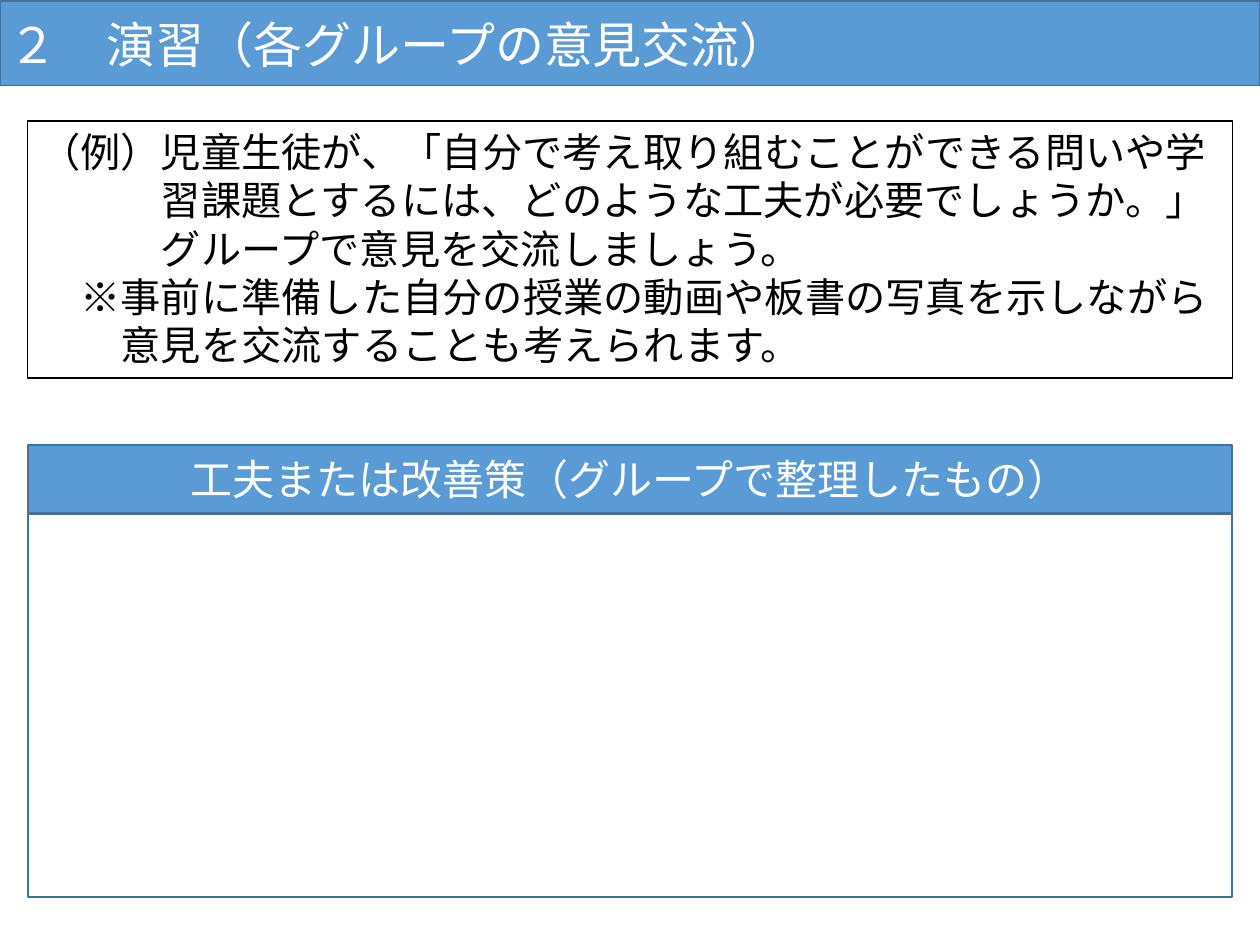
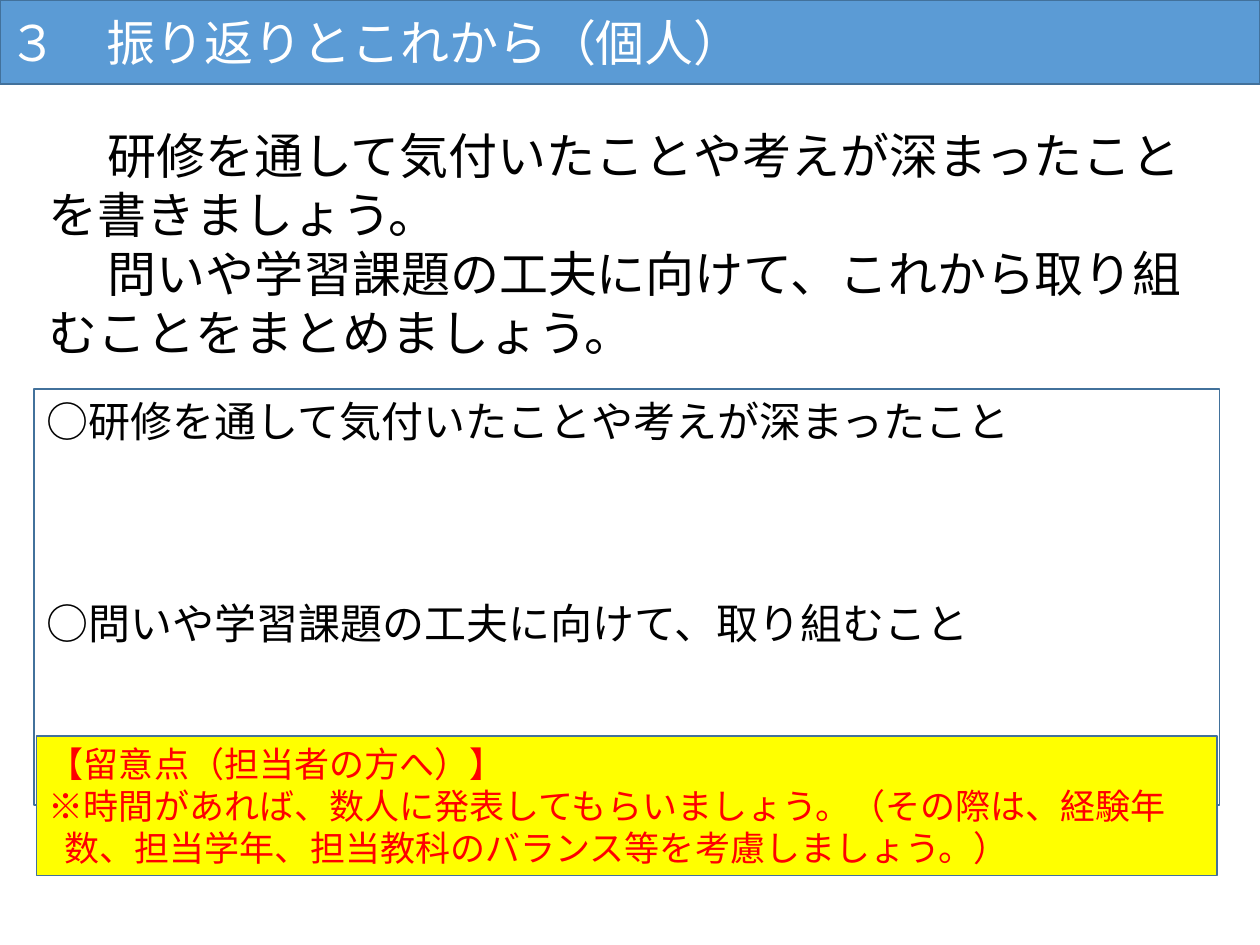
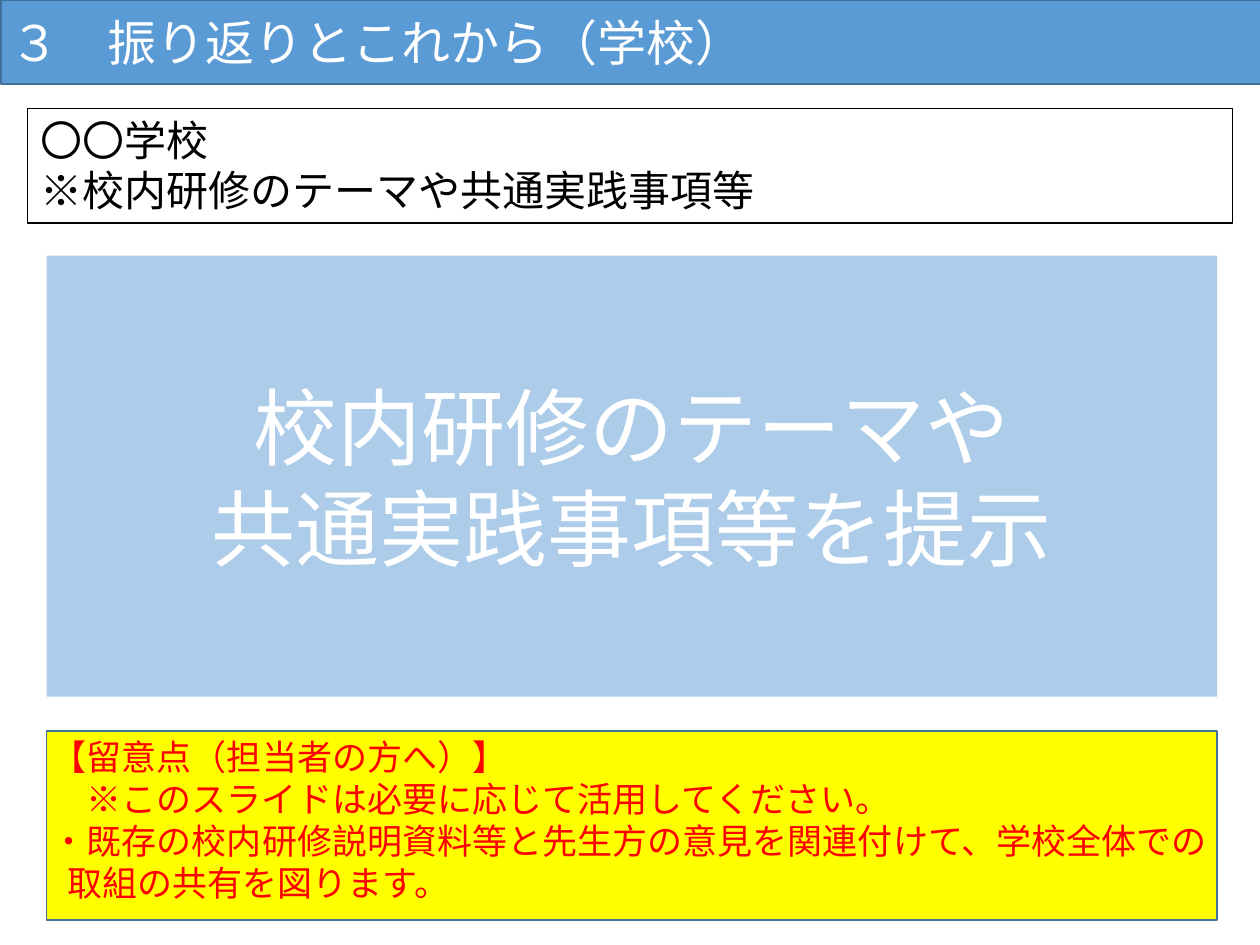
from lxml import etree
from pptx import Presentation
from pptx.dml.color import RGBColor
from pptx.enum.shapes import MSO_SHAPE
from pptx.enum.text import MSO_ANCHOR, PP_ALIGN
from pptx.oxml.ns import qn
from pptx.util import Inches, Pt

RECTANGLE = MSO_SHAPE.RECTANGLE
TOP, MIDDLE = MSO_ANCHOR.TOP, MSO_ANCHOR.MIDDLE
LEFT, CENTER = PP_ALIGN.LEFT, PP_ALIGN.CENTER

WIDTH, HEIGHT = Inches(10), Inches(7.5)
COLUMNS, ROWS = 100, 75
BLUE, BLUE_EDGE = "5B9BD5", "42719B"
YELLOW, RED, BLACK, WHITE = "FFFF00", "FF0000", "000000", "FFFFFF"
JAPANESE, ARIAL, CALIBRI = "Noto Sans CJK JP", "Arial", "Calibri"
LINE_HEIGHT = 1.2
HALF_STEP, LEAD_IN = 0.45, 1.2
NOTE_HEADING = "【留意点（担当者の方へ）】"


def color(value):
    """Turn a hex string into a colour."""
    return RGBColor.from_string(value)


def add_slide(presentation):
    """Add a blank slide."""
    return presentation.slides.add_slide(presentation.slide_layouts[6])


def add_box(slide, area, fill=None, edge=None, edge_width=1, opacity=100):
    """Add a rectangle placed by grid column, row, width and height."""
    column, row, across, down = area
    shape = slide.shapes.add_shape(
        RECTANGLE,
        round(WIDTH * column / COLUMNS),
        round(HEIGHT * row / ROWS),
        round(WIDTH * across / COLUMNS),
        round(HEIGHT * down / ROWS),
    )
    shape.shadow.inherit = False
    if fill:
        shape.fill.solid()
        shape.fill.fore_color.rgb = color(fill)
        if opacity < 100:
            tint = shape._element.spPr.find(qn("a:solidFill"))[0]
            etree.SubElement(tint, qn("a:alpha"), val=str(opacity * 1000))
    else:
        shape.fill.background()
    if edge:
        shape.line.color.rgb = color(edge)
        shape.line.width = Pt(edge_width)
    else:
        shape.line.fill.background()
    return shape


def prepare_frame(shape, anchor=TOP, insets=(0.1, 0.05)):
    """Set wrapping, anchor and insets, and return the text frame."""
    frame = shape.text_frame
    frame.word_wrap = True
    frame.vertical_anchor = anchor
    frame.margin_left = frame.margin_right = Inches(insets[0])
    frame.margin_top = frame.margin_bottom = Inches(insets[1])
    return frame


def write(frame, lines, size, ink=BLACK, font=JAPANESE, align=LEFT, gap=0):
    """Write (text, margin, first indent) lines, with indents in characters."""
    for index, (text, margin, indent) in enumerate(lines):
        paragraph = frame.add_paragraph() if index else frame.paragraphs[0]
        paragraph.text = text
        paragraph.alignment = align
        paragraph.line_spacing = Pt(LINE_HEIGHT * size)
        paragraph.space_before = Pt(gap * LINE_HEIGHT * size if index else 0)
        paragraph.font.size = Pt(size)
        paragraph.font.color.rgb = color(ink)
        paragraph.font.name = font
        properties = paragraph._p.get_or_add_pPr()
        properties.set("marL", str(round(Pt(size) * margin)))
        properties.set("indent", str(round(Pt(size) * indent)))
        defaults = properties.find(qn("a:defRPr"))
        etree.SubElement(defaults, qn("a:ea"), typeface=JAPANESE)


def flush(*texts):
    """Give lines without any indent."""
    return [(text, 0, 0) for text in texts]


def add_title(slide, text, column=0, row=0):
    """Add the title band across the top."""
    band = add_box(slide, (column, row, COLUMNS, 6.7), BLUE, BLUE_EDGE)
    write(prepare_frame(band, MIDDLE, (0.07, 0.04)), flush(text), 28, WHITE)


def add_framed_text(slide, row, down, lines, size):
    """Add a black-edged box of text over the full content width."""
    box = add_box(slide, (2.2, row, 95.6, down), edge=BLACK, edge_width=0.75)
    write(prepare_frame(box), lines, size)


def add_note(slide, area, lines, edge_width, insets):
    """Add the yellow note for the person in charge."""
    note = add_box(slide, area, YELLOW, BLUE_EDGE, edge_width)
    write(prepare_frame(note, insets=insets),
          flush(NOTE_HEADING) + lines, 20, RED, CALIBRI)


def build_exchange(presentation):
    """Build the group exchange slide."""
    slide = add_slide(presentation)
    add_framed_text(slide, 9.6, 20.4, [
        ("（例）児童生徒が、「自分で考え取り組むことができる問いや学", 0, 0),
        ("習課題とするには、どのような工夫が必要でしょうか。」", 3, 0),
        ("グループで意見を交流しましょう。", 3, 0),
        ("※事前に準備した自分の授業の動画や板書の写真を示しながら", 1, 0),
        ("意見を交流することも考えられます。", 2, 0),
    ], 23)
    add_box(slide, (2.2, 40.8, 95.6, 30.4), edge=BLUE_EDGE)
    heading = add_box(slide, (2.2, 35.3, 95.6, 5.4), BLUE, BLUE_EDGE)
    write(prepare_frame(heading, MIDDLE),
          flush("工夫または改善策（グループで整理したもの）"),
          24, WHITE, align=CENTER)
    add_title(slide, "２　演習（各グループの意見交流）", row=0.1)


def build_personal_review(presentation):
    """Build the personal review slide."""
    slide = add_slide(presentation)
    answers = add_box(slide, (2.7, 30.9, 94.1, 33), edge=BLUE_EDGE)
    write(prepare_frame(answers), flush(
        "○研修を通して気付いたことや考えが深まったこと",
        "○問いや学習課題の工夫に向けて、取り組むこと",
    ), 24, font=ARIAL, gap=3)
    task = add_box(slide, (2.9, 9.5, 95.6, 24.6))
    write(prepare_frame(task), [
        ("研修を通して気付いたことや考えが深まったことを書きましょう。",
         0, LEAD_IN),
        ("問いや学習課題の工夫に向けて、これから取り組むことをまとめましょう。",
         0, LEAD_IN),
    ], 28, font=ARIAL)
    add_note(slide, (2.9, 58.4, 93.7, 11.1), [
        ("※時間があれば、数人に発表してもらいましょう。（その際は、経験年", 0, 0),
        ("数、担当学年、担当教科のバランス等を考慮しましょう。）", HALF_STEP, 0),
    ], 0.75, (0.1, 0.05))
    add_title(slide, "３　振り返りとこれから（個人）")


def build_school_review(presentation):
    """Build the school review slide."""
    slide = add_slide(presentation)
    add_framed_text(slide, 8.6, 9.1, flush(
        "〇〇学校", "※校内研修のテーマや共通実践事項等"), 24)
    theme = add_box(slide, (3.7, 20.3, 92.9, 35), BLUE, opacity=50)
    write(prepare_frame(theme, MIDDLE),
          flush("校内研修のテーマや", "共通実践事項等を提示"),
          48, WHITE, ARIAL, CENTER)
    add_note(slide, (3.7, 58, 92.9, 15), [
        ("※このスライドは必要に応じて活用してください。", 1, 0),
        ("・既存の校内研修説明資料等と先生方の意見を関連付けて、学校全体での", 0, 0),
        ("取組の共有を図ります。", HALF_STEP, 0),
    ], 1, (0.04, 0.04))
    add_title(slide, "３　振り返りとこれから（学校）", column=0.1)


def main():
    """Build and save the presentation."""
    presentation = Presentation()
    presentation.slide_width, presentation.slide_height = WIDTH, HEIGHT
    build_exchange(presentation)
    build_personal_review(presentation)
    build_school_review(presentation)
    presentation.save("out.pptx")


if __name__ == "__main__":
    main()
